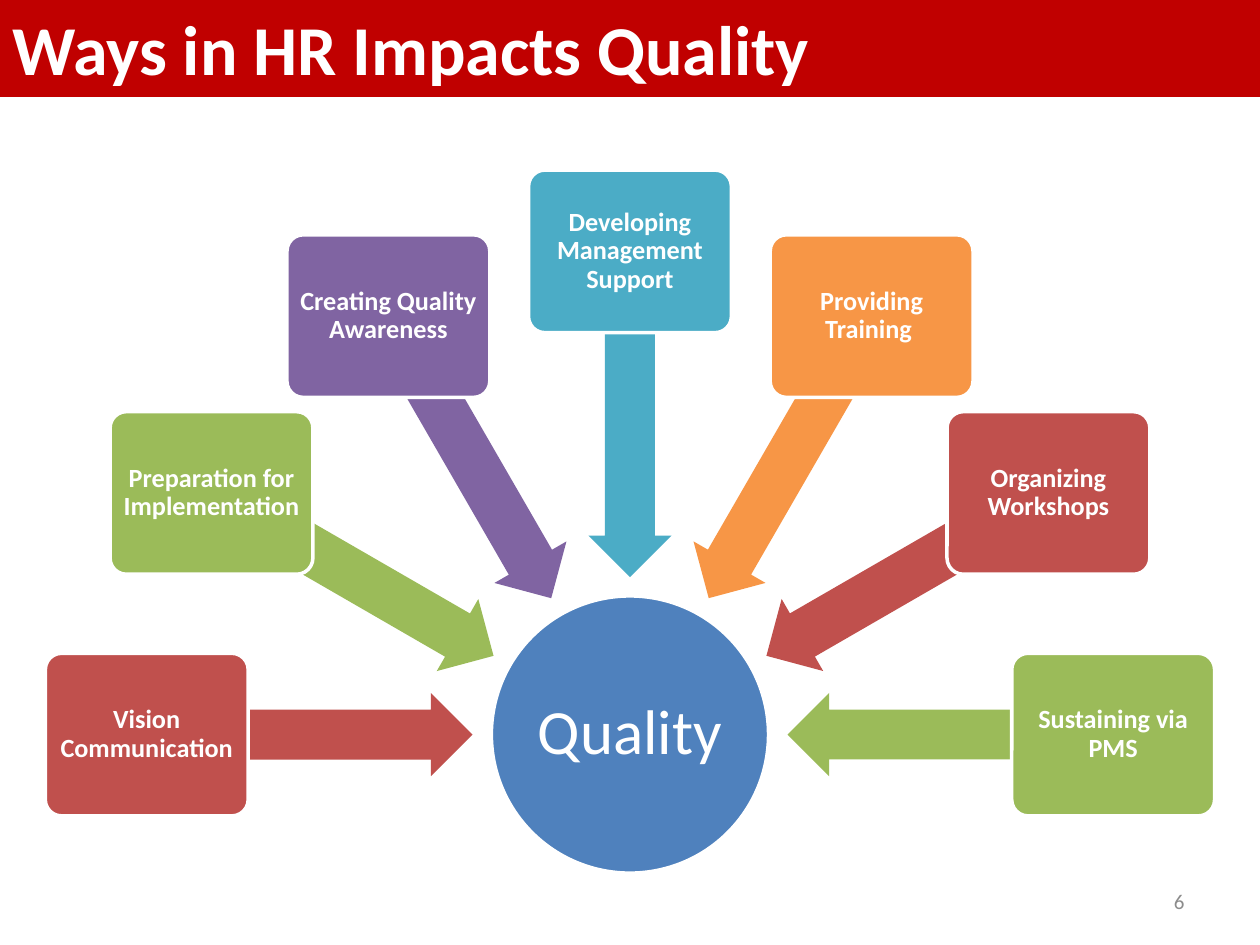
from dataclasses import dataclass
from math import cos, radians, sin

from pptx import Presentation
from pptx import util as u
from pptx.dml.color import RGBColor
from pptx.enum import shapes, text

KIND = shapes.MSO_SHAPE
ALIGN = text.PP_ALIGN


@dataclass(frozen=True)
class Theme:
    font: str = "Calibri"
    white: str = "FFFFFF"
    gray: str = "8C8C8C"
    bar: str = "C00000"
    blue: str = "4F81BD"
    red: str = "C0504D"
    green: str = "9BBB59"
    violet: str = "8064A2"
    teal: str = "4BACC6"
    orange: str = "F79646"
    head: int = 40
    hub: int = 36
    label: int = 15
    note: int = 12
    edge: int = 2


def write(shape, words, *, font, size, color, bold=False, align=ALIGN.CENTER,
          space=None, inset=None, wrap=True):
    frame = shape.text_frame
    frame.auto_size = text.MSO_AUTO_SIZE.NONE
    frame.word_wrap = wrap
    frame.vertical_anchor = text.MSO_ANCHOR.MIDDLE
    if inset is not None:
        frame.margin_left = frame.margin_right = u.Inches(inset)
        frame.margin_top = frame.margin_bottom = u.Inches(inset)
    para = frame.paragraphs[0]
    para.alignment = align
    if space:
        para.line_spacing = space
    run = para.add_run()
    run.text = words
    run.font.name = font
    run.font.size = u.Pt(size)
    run.font.bold = bold
    run.font.color.rgb = RGBColor.from_string(color)


class Board:
    cols, rows = 100, 75

    def __init__(self, deck, theme):
        self.theme = theme
        self.wide = deck.slide_width / self.cols
        self.high = deck.slide_height / self.rows
        self.slide = deck.slides.add_slide(deck.slide_layouts[5])

    def place(self, x, y, w, h):
        return (round(x * self.wide), round(y * self.high),
                round(w * self.wide), round(h * self.high))

    def paint(self, shape, fill, line=None):
        shape.fill.solid()
        shape.fill.fore_color.rgb = RGBColor.from_string(fill)
        if line:
            shape.line.color.rgb = RGBColor.from_string(line)
            shape.line.width = u.Pt(self.theme.edge)
        else:
            shape.line.fill.background()

    def shape(self, kind, x, y, w, h, fill, line=None):
        item = self.slide.shapes.add_shape(
            kind, *self.place(x - w / 2, y - h / 2, w, h))
        item.shadow.inherit = False
        self.paint(item, fill, line)
        return item

    def title(self, words, h):
        t = self.theme
        item = self.slide.shapes.title
        item.left, item.top, item.width, item.height = self.place(
            0, 0, self.cols, h)
        self.paint(item, t.bar, t.bar)
        write(item, words, font=t.font, size=t.head, color=t.white,
              bold=True, align=ALIGN.LEFT)

    def hub(self, words, x, y, size):
        t = self.theme
        item = self.shape(KIND.OVAL, x, y, size, size, t.blue, t.white)
        write(item, words, font=t.font, size=t.hub, color=t.white,
              space=0.9, inset=0.03, wrap=False)

    def arrow(self, x, y, w, h, turn, fill):
        item = self.shape(KIND.LEFT_ARROW, x, y, w, h, fill)
        item.adjustments[0] = 0.6
        item.adjustments[1] = 0.5
        item.rotation = turn

    def card(self, words, x, y, w, h, fill):
        t = self.theme
        item = self.shape(KIND.ROUNDED_RECTANGLE, x, y, w, h, fill, t.white)
        item.adjustments[0] = 0.1
        write(item, words, font=t.font, size=t.label, color=t.white,
              bold=True, space=0.9, inset=0.03)

    def number(self, words, x, y, w, h):
        t = self.theme
        item = self.slide.shapes.add_textbox(*self.place(x, y, w, h))
        write(item, words, font=t.font, size=t.note, color=t.gray,
              align=ALIGN.RIGHT)


def main():
    deck = Presentation()
    deck.slide_width, deck.slide_height = u.Inches(10), u.Inches(7.5)
    theme = Theme()
    board = Board(deck, theme)
    board.title("Ways in HR Impacts Quality", 7.6)

    mid, base = 50, 58.3
    board.hub("Quality", mid, base, 22)
    ways = [
        ("Vision Communication", theme.red),
        ("Preparation for Implementation", theme.green),
        ("Creating Quality Awareness", theme.violet),
        ("Developing Management Support", theme.teal),
        ("Providing Training ", theme.orange),
        ("Organizing Workshops", theme.red),
        ("Sustaining via PMS", theme.green),
    ]
    step = 180 / (len(ways) - 1)
    near, far = 25.4, 38.35
    for i, (words, fill) in enumerate(ways):
        turn = (180 + i * step) % 360
        dx, dy = cos(radians(turn)), sin(radians(turn))
        board.arrow(mid + near * dx, base + near * dy, 25.8, 6.6, turn, fill)
        board.card(words, mid + far * dx, base + far * dy, 16.1, 12.9, fill)

    board.number("6", 71.7, 69.5, 23.3, 4)
    deck.save("out.pptx")


if __name__ == "__main__":
    main()
